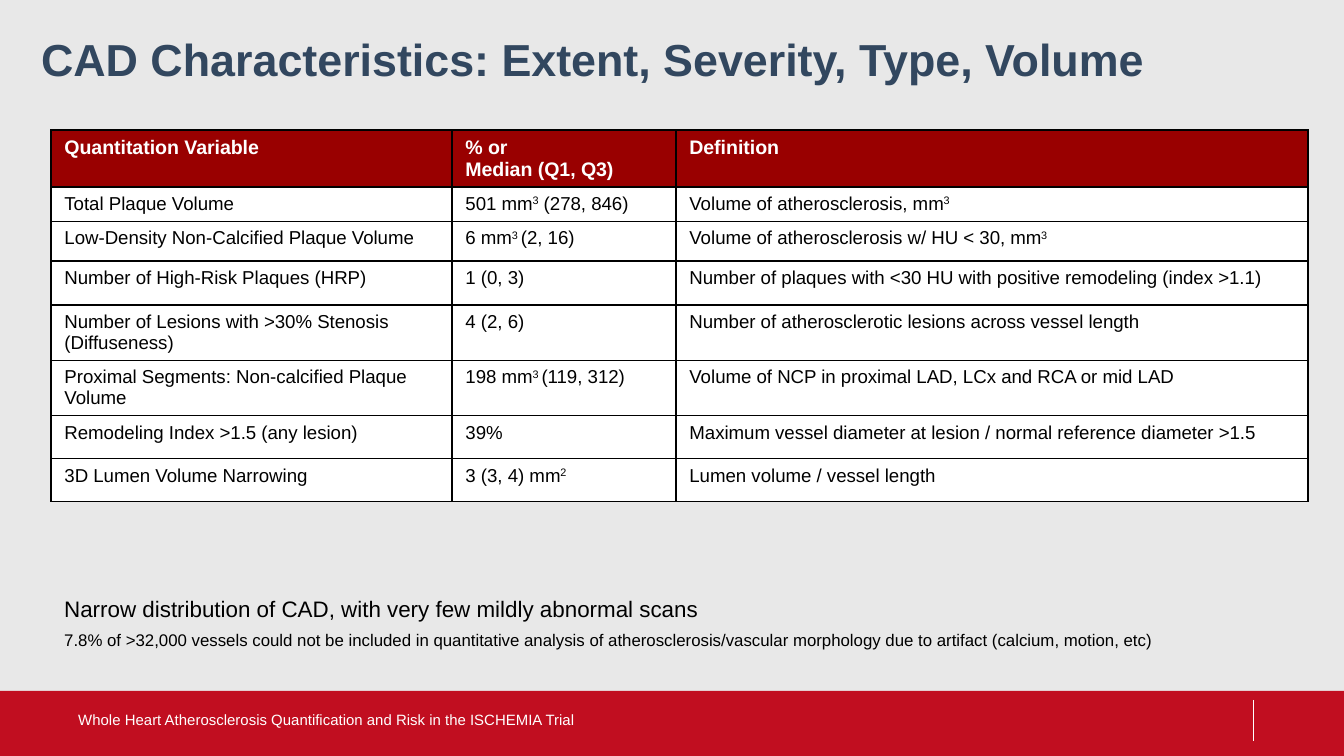
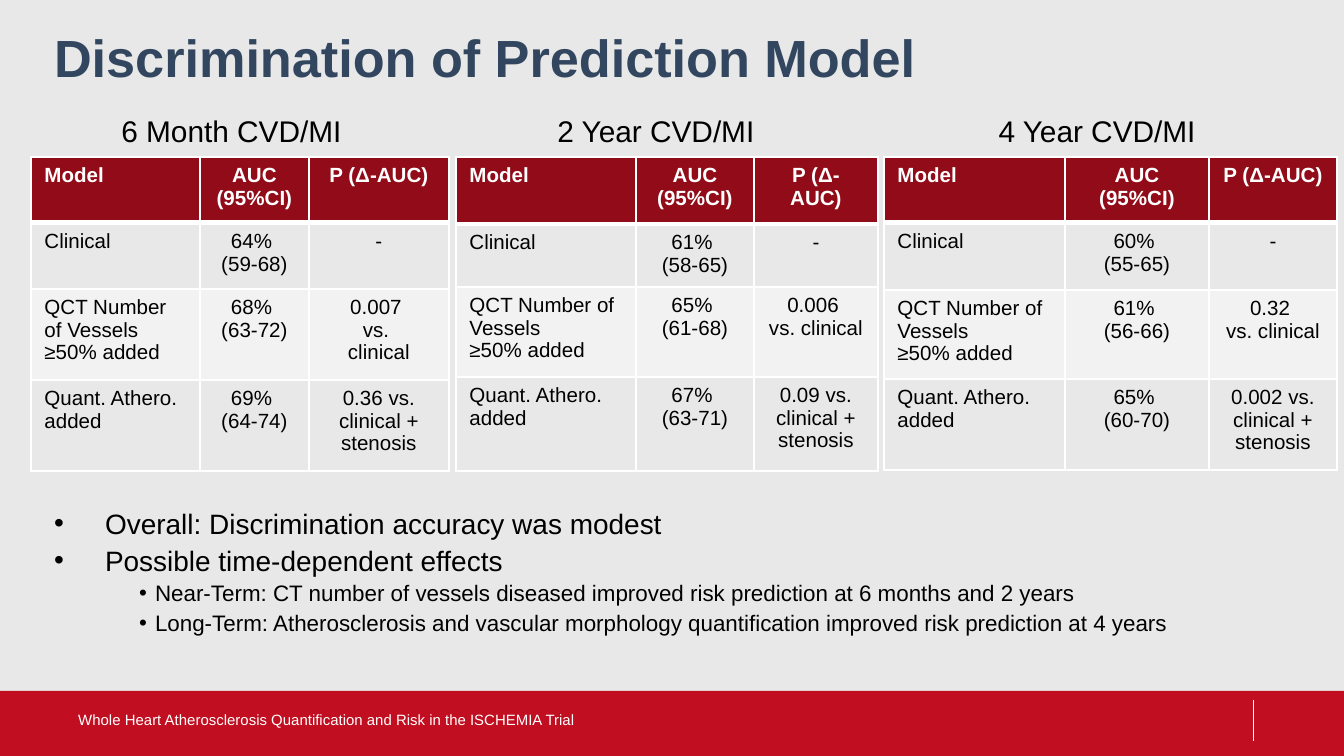
from dataclasses import dataclass

from lxml.etree import SubElement
from pptx import Presentation
from pptx.dml.color import RGBColor
from pptx.enum.shapes import MSO_CONNECTOR, MSO_SHAPE
from pptx.enum.text import MSO_ANCHOR as Anchor, MSO_AUTO_SIZE as AutoSize, PP_ALIGN as Align
from pptx.oxml.ns import qn
from pptx.util import Emu, Pt

EMU_PER_PX = 914400 / 134.4
TITLE_AND_BODY, TITLE_ONLY = 1, 5


@dataclass(frozen=True)
class Style:
    size: float
    color: str = "000000"
    bold: bool = False


@dataclass(frozen=True)
class Theme:
    font: str = "Arial"
    background: str = "E8E8E8"
    band: str = "C10E20"
    white: str = "FFFFFF"
    black: str = "000000"
    variable_header: str = "990000"
    model_header: str = "910B18"
    model_stripe: str = "F2F2F2"
    long_title: Style = Style(24, "32475F", True)
    title: Style = Style(28, "32475F", True)
    heading: Style = Style(16)
    point: Style = Style(15)
    subpoint: Style = Style(12)
    remark: Style = Style(12)
    small_remark: Style = Style(9)
    footer: Style = Style(8, "FFFFFF")
    variable_head: Style = Style(10.5, "FFFFFF", True)
    variable_body: Style = Style(10)
    model_head: Style = Style(11, "FFFFFF", True)
    model_body: Style = Style(11)


THEME = Theme()
FOOTER = "Whole Heart Atherosclerosis Quantification and Risk in the ISCHEMIA Trial"

VARIABLES = [
    ("Quantitation Variable", "% or\nMedian (Q1, Q3)", "Definition"),
    ("Total Plaque Volume", "501 mm^3^ (278, 846)", "Volume of atherosclerosis, mm^3"),
    ("Low-Density Non-Calcified Plaque Volume", "6 mm^3 ^(2, 16)",
     "Volume of atherosclerosis w/ HU < 30, mm^3"),
    ("Number of High-Risk Plaques (HRP)", "1 (0, 3)",
     "Number of plaques with <30 HU with positive remodeling (index >1.1)"),
    ("Number of Lesions with >30% Stenosis (Diffuseness)", "4 (2, 6)",
     "Number of atherosclerotic lesions across vessel length"),
    ("Proximal Segments: Non-calcified Plaque Volume", "198 mm^3 ^(119, 312)",
     "Volume of NCP in proximal LAD, LCx and RCA or mid LAD"),
    ("Remodeling Index >1.5 (any lesion)", "39%",
     "Maximum vessel diameter at lesion / normal reference diameter >1.5"),
    ("3D Lumen Volume Narrowing", "3 (3, 4) mm^2", "Lumen volume / vessel length"),
]


@dataclass(frozen=True)
class Horizon:
    """Model results for one follow-up time, with the places of its heading and table."""
    heading: str
    heading_left: int
    heading_width: int
    left: int
    columns: tuple
    rows: tuple
    vessels: str
    aucs: tuple
    p_values: tuple


HORIZONS = [
    Horizon("6 Month CVD/MI", 28, 407, 31, (169, 109, 140), (66, 66, 91, 91),
            "QCT Number of Vessels ≥50% added",
            ("64% \n(59-68)", "68% \n(63-72)", "69% \n(64-74)"),
            ("-", "0.007 \nvs. \nclinical", "0.36 vs.\nclinical + stenosis")),
    Horizon("2 Year CVD/MI", 469, 374, 456, (180, 118, 124), (67, 63, 90, 94),
            "QCT Number of Vessels\n≥50% added",
            ("61% \n(58-65)", "65% \n(61-68)", "67% \n(63-71)"),
            ("-", "0.006 \nvs. clinical", "0.09 vs.\nclinical + stenosis")),
    Horizon("4 Year CVD/MI", 904, 386, 884, (181, 144, 128), (66, 67, 89, 91),
            "QCT Number of Vessels\n≥50% added",
            ("60% \n(55-65)", "61% \n(56-66)", "65% \n(60-70)"),
            ("-", "0.32 \nvs. clinical", "0.002 vs.\nclinical + stenosis")),
]

CONCLUSIONS = [
    (0, "Overall: Discrimination accuracy was modest"),
    (0, "Possible time-dependent effects"),
    (1, "Near-Term: CT number of vessels diseased improved risk prediction at 6 months and 2 years"),
    (1, "Long-Term: Atherosclerosis and vascular morphology quantification improved"
        " risk prediction at 4 years"),
]


def px(length):
    return Emu(round(length * EMU_PER_PX))


def rgb(color):
    return RGBColor.from_string(color)


def fill_solid(fill, color):
    fill.solid()
    fill.fore_color.rgb = rgb(color)


def format_runs(paragraph, style):
    for run in paragraph.runs:
        run.font.name = THEME.font
        run.font.size = Pt(style.size)
        run.font.bold = style.bold
        run.font.color.rgb = rgb(style.color)


def raise_marked(paragraph):
    """Turn the pieces between ^ marks into superscript runs."""
    first, *rest = paragraph.text.split("^")
    paragraph.text = first
    for index, piece in enumerate(rest):
        run = paragraph.add_run()
        run.text = piece
        if index % 2 == 0:
            run._r.get_or_add_rPr().set("baseline", "30000")


def write(frame, text, style, align=Align.LEFT, spacing=None):
    frame.text = text
    for paragraph in frame.paragraphs:
        if "^" in paragraph.text:
            raise_marked(paragraph)
        paragraph.alignment = align
        paragraph.line_spacing = spacing
        format_runs(paragraph, style)


def place(shape, left, top, width, height):
    shape.left, shape.top = px(left), px(top)
    shape.width, shape.height = px(width), px(height)


def tighten(frame):
    """Top-anchor the text with narrow margins and no autofit."""
    frame.margin_left = frame.margin_right = px(3)
    frame.margin_top = frame.margin_bottom = px(3)
    frame.vertical_anchor = Anchor.TOP
    frame.auto_size = AutoSize.NONE
    frame.word_wrap = True


def add_text(slide, box, text, style, **layout):
    frame = slide.shapes.add_textbox(*map(px, box)).text_frame
    frame.word_wrap = True
    write(frame, text, style, **layout)
    return frame


def set_title(slide, box, text, style):
    place(slide.shapes.title, *box)
    frame = slide.shapes.title.text_frame
    tighten(frame)
    write(frame, text, style, spacing=1.1)


def add_footer(slide):
    footer = add_text(slide, (65, 700, 809, 40), FOOTER, THEME.footer)
    footer.vertical_anchor = Anchor.MIDDLE


def set_borders(cell, color, bottom=1):
    properties = cell._tc.get_or_add_tcPr()
    for side, points in (("L", 1), ("R", 1), ("T", 1), ("B", bottom)):
        line = SubElement(properties, qn(f"a:ln{side}"), w=str(Pt(points)))
        paint = SubElement(line, qn("a:solidFill"))
        SubElement(paint, qn("a:srgbClr"), val=color)


def add_grid(slide, left, top, columns, heights, rows, format_cell):
    """Add a table; format_cell(cell, row, column, text) fills each cell."""
    size = px(sum(columns)), px(sum(heights))
    table = slide.shapes.add_table(len(rows), len(columns), px(left), px(top), *size).table
    table.first_row = table.horz_banding = False
    for column, width in zip(table.columns, columns):
        column.width = px(width)
    for row, height in zip(table.rows, heights):
        row.height = px(height)
    for r, texts in enumerate(rows):
        for c, text in enumerate(texts):
            format_cell(table.cell(r, c), r, c, text)


def format_variable_cell(cell, row, column, text):
    is_header = row == 0
    set_borders(cell, THEME.black)
    fill_solid(cell.fill, THEME.variable_header if is_header else THEME.white)
    write(cell.text_frame, text, THEME.variable_head if is_header else THEME.variable_body)


def format_model_cell(cell, row, column, text):
    is_header = row == 0
    set_borders(cell, THEME.white, bottom=3 if is_header else 1)
    if is_header:
        fill_solid(cell.fill, THEME.model_header)
    elif row == 2:
        fill_solid(cell.fill, THEME.model_stripe)
    else:
        cell.fill.background()
    write(cell.text_frame, text, THEME.model_head if is_header else THEME.model_body,
          align=Align.CENTER if column else Align.LEFT)


def add_horizon(slide, horizon):
    heading = add_text(slide, (horizon.heading_left, 106, horizon.heading_width, 36),
                       horizon.heading, THEME.heading, align=Align.CENTER, spacing=1.1)
    tighten(heading)
    models = ("Clinical", horizon.vessels, "Quant. Athero.\nadded")
    rows = [("Model", "AUC (95%CI)", "P (Δ-AUC)"),
            *zip(models, horizon.aucs, horizon.p_values)]
    add_grid(slide, horizon.left, 157, horizon.columns, horizon.rows, rows, format_model_cell)


def set_bullets(body, box, points):
    place(body, *box)
    frame = body.text_frame
    tighten(frame)
    frame.text = "\n".join(text for _, text in points)
    for paragraph, (level, _) in zip(frame.paragraphs, points):
        indent, hang = ((51, 51), (101, 16))[level]
        paragraph.level = level
        paragraph.alignment = Align.LEFT
        paragraph.line_spacing = 1.1
        paragraph.space_before = Pt(0)
        properties = paragraph._p.get_or_add_pPr()
        properties.set("marL", str(px(indent)))
        properties.set("indent", str(-px(hang)))
        SubElement(properties, qn("a:buFont"), typeface=THEME.font)
        SubElement(properties, qn("a:buChar"), char="•")
        format_runs(paragraph, THEME.subpoint if level else THEME.point)


def decorate_master(master, slide):
    """Draw the band and its divider on the slide, then move them to the master."""
    fill_solid(master.background.fill, THEME.background)
    band = slide.shapes.add_shape(MSO_SHAPE.RECTANGLE, *map(px, (0, 691, 1344, 65)))
    band.shadow.inherit = False
    fill_solid(band.fill, THEME.band)
    band.line.fill.background()
    divider = slide.shapes.add_connector(MSO_CONNECTOR.STRAIGHT, *map(px, (1253, 700, 1253, 741)))
    divider.line.color.rgb = rgb(THEME.white)
    divider.line.width = Pt(0.5)
    SubElement(divider.element.spPr, qn("a:effectLst"))
    for offset, part in enumerate((band, divider)):
        part.element.xpath(".//p:cNvPr")[0].set("id", str(101 + offset))
        master.shapes.element.insert(2 + offset, part.element)


def build_characteristics(slide):
    set_title(slide, (38, 23, 1284, 77),
              "CAD Characteristics: Extent, Severity, Type, Volume", THEME.long_title)
    add_grid(slide, 51, 130, (401, 224, 632), (43, 31, 40, 44, 43, 43, 43, 43),
             VARIABLES, format_variable_cell)
    add_text(slide, (51, 589, 1284, 40),
             "Narrow distribution of CAD, with very few mildly abnormal scans", THEME.remark)
    add_text(slide, (51, 613, 1284, 44),
             "7.8% of >32,000 vessels could not be included in quantitative analysis of "
             "atherosclerosis/vascular morphology due to artifact (calcium, motion, etc)",
             THEME.small_remark, spacing=1.5)
    add_footer(slide)


def build_discrimination(slide):
    set_title(slide, (51, 16, 1284, 56), "Discrimination of Prediction Model", THEME.title)
    for horizon in HORIZONS:
        add_horizon(slide, horizon)
    set_bullets(slide.placeholders[1], (51, 500, 1284, 164), CONCLUSIONS)
    add_footer(slide)


def main():
    deck = Presentation()
    deck.slide_width, deck.slide_height = px(1344), px(756)
    characteristics = deck.slides.add_slide(deck.slide_layouts[TITLE_ONLY])
    discrimination = deck.slides.add_slide(deck.slide_layouts[TITLE_AND_BODY])
    decorate_master(deck.slide_master, characteristics)
    build_characteristics(characteristics)
    build_discrimination(discrimination)
    deck.save("out.pptx")


if __name__ == "__main__":
    main()
